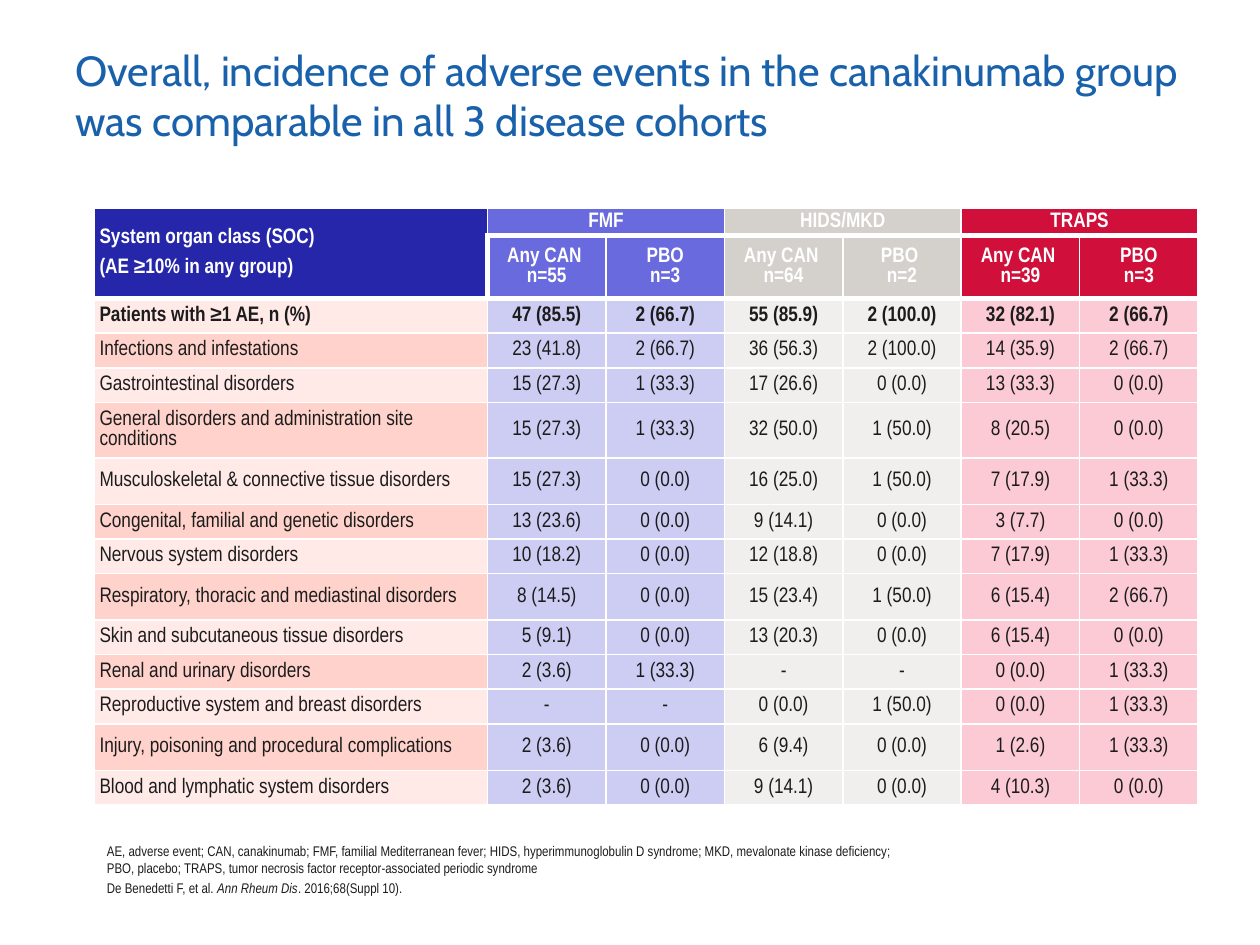
"""Build the slide of adverse events by disease cohort."""
import copy

import lxml.etree
import pptx
import pptx.dml.color
import pptx.enum.text
import pptx.oxml.ns
import pptx.util

Inches, Pt = pptx.util.Inches, pptx.util.Pt
ANCHOR, ALIGN = pptx.enum.text.MSO_ANCHOR, pptx.enum.text.PP_ALIGN
qn = pptx.oxml.ns.qn

COLORS = {
    "title": "1961AB", "text": "1C1C1C", "white": "FFFFFF", "corner": "2526A9",
    "odd": "FFEAE8", "even": "FFD3CC",
    "FMF": "696ADE", "HIDS/MKD": "D4D0CB", "TRAPS": "D0103A",
    "FMF light": "CDCDF4", "HIDS/MKD light": "F1EFEE", "TRAPS light": "FBCAD5",
}
COHORTS = ["FMF", "HIDS/MKD", "TRAPS"]
HEADINGS = ["Any CAN \vn=55", "PBO\vn=3", "Any CAN \vn=64", "PBO \vn=2", "Any CAN \vn=39", "PBO\nn=3"]
EVENTS = [
    ["Patients with ≥1 AE, n (%)", "47 (85.5)", "2 (66.7)", "55 (85.9)", "2 (100.0)", "32 (82.1)", "2 (66.7)"],
    ["Infections and infestations", "23 (41.8)", "2 (66.7)", "36 (56.3)", "2 (100.0)", "14 (35.9)", "2 (66.7)"],
    ["Gastrointestinal disorders", "15 (27.3)", "1 (33.3)", "17 (26.6)", "0 (0.0)", "13 (33.3)", "0 (0.0)"],
    ["General disorders and administration site conditions",
     "15 (27.3)", "1 (33.3)", "32 (50.0)", "1 (50.0)", "8 (20.5)", "0 (0.0)"],
    ["Musculoskeletal & connective tissue disorders",
     "15 (27.3)", "0 (0.0)", "16 (25.0)", "1 (50.0)", "7 (17.9)", "1 (33.3)"],
    ["Congenital, familial and genetic disorders",
     "13 (23.6)", "0 (0.0)", "9 (14.1)", "0 (0.0)", "3 (7.7)", "0 (0.0)"],
    ["Nervous system disorders", "10 (18.2)", "0 (0.0)", "12 (18.8)", "0 (0.0)", "7 (17.9)", "1 (33.3)"],
    ["Respiratory, thoracic and mediastinal disorders",
     "8 (14.5)", "0 (0.0)", "15 (23.4)", "1 (50.0)", "6 (15.4)", "2 (66.7)"],
    ["Skin and subcutaneous tissue disorders", "5 (9.1)", "0 (0.0)", "13 (20.3)", "0 (0.0)", "6 (15.4)", "0 (0.0)"],
    ["Renal and urinary disorders", "2 (3.6)", "1 (33.3)", "-", "-", "0 (0.0)", "1 (33.3)"],
    ["Reproductive system and breast disorders", "-", "-", "0 (0.0)", "1 (50.0)", "0 (0.0)", "1 (33.3)"],
    ["Injury, poisoning and procedural complications",
     "2 (3.6)", "0 (0.0)", "6 (9.4)", "0 (0.0)", "1 (2.6)", "1 (33.3)"],
    ["Blood and lymphatic system disorders", "2 (3.6)", "0 (0.0)", "9 (14.1)", "0 (0.0)", "4 (10.3)", "0 (0.0)"],
]


def style_paragraph(paragraph, color, font_format):
    for run in paragraph.runs:
        for name, value in font_format.items():
            setattr(run.font, name, value)
        run.font.color.rgb = pptx.dml.color.RGBColor.from_string(COLORS[color])
    for line_break in paragraph._p.findall(qn("a:br")):
        line_break.append(copy.deepcopy(paragraph.runs[0]._r.rPr))


def add_border(cell, side, points):
    line = lxml.etree.SubElement(cell._tc.get_or_add_tcPr(), qn(f"a:ln{side}"), w=str(Pt(points)))
    fill = lxml.etree.SubElement(line, qn("a:solidFill"))
    lxml.etree.SubElement(fill, qn("a:srgbClr"), val=COLORS["white"])


deck = pptx.Presentation()
deck.slide_width, deck.slide_height = Inches(10), Inches(7.5)
slide = deck.slides.add_slide(deck.slide_layouts[6])

title = slide.shapes.add_textbox(Inches(0.5), Inches(0.3), Inches(9), Inches(1.25)).text_frame
title.word_wrap = True
title.text = "Overall, incidence of adverse events in the canakinumab group was comparable in all 3 disease cohorts"
style_paragraph(title.paragraphs[0], "title", {"name": "Cabin", "size": Pt(24)})

notes = slide.shapes.add_textbox(Inches(0.75), Inches(6.6), Inches(6.58), Inches(0.56)).text_frame
notes.word_wrap = True
notes.vertical_anchor = ANCHOR.BOTTOM
notes.text = (
    "AE, adverse event; CAN, canakinumab; FMF, familial Mediterranean fever; HIDS, hyperimmunoglobulin D syndrome; "
    "MKD, mevalonate kinase deficiency; PBO, placebo; TRAPS, tumor necrosis factor receptor-associated periodic syndrome"
)
citation = notes.add_paragraph()
citation.space_before = Pt(1.6)
for part in ["De Benedetti F, et al. ", "Ann Rheum Dis", ". 2016;68(Suppl 10)."]:
    citation.add_run().text = part
for paragraph in notes.paragraphs:
    style_paragraph(paragraph, "text", {"name": "Arial Narrow", "size": Pt(8)})
citation.runs[1].font.italic = True

cohort_row = ["System organ class (SOC)\n(AE ≥10% in any group)"]
for cohort in COHORTS:
    cohort_row += [cohort, ""]
rows = [cohort_row, [""] + HEADINGS] + EVENTS

events = slide.shapes.add_table(len(rows), 7, Inches(0.75), Inches(1.65), Inches(8.76), Inches(4.68)).table
for index, column in enumerate(events.columns):
    column.width = Inches(0.94 if index else 3.12)
special_heights = {0: 0.22, 1: 0.44, 5: 0.44, 6: 0.37, 9: 0.37, 13: 0.37}
plain_height = (4.68 - sum(special_heights.values())) / (len(rows) - len(special_heights))
for index, row in enumerate(events.rows):
    row.height = Inches(special_heights.get(index, plain_height))

cell_format = {
    "vertical_anchor": ANCHOR.MIDDLE, "margin_left": Inches(0.04), "margin_right": Inches(0.04),
    "margin_top": 0, "margin_bottom": 0,
}
for r, values in enumerate(rows):
    for c, value in enumerate(values):
        cell = events.cell(r, c)
        cell.text = value
        for name, setting in cell_format.items():
            setattr(cell, name, setting)
        widths = {"L": 3 if (r, c) == (1, 1) else 1, "R": 1, "T": 3 if r in (1, 2) else 1, "B": 3 if r < 2 else 1}
        for side, points in widths.items():
            add_border(cell, side, points)
        if c:
            fill = COHORTS[(c - 1) // 2] + (" light" if r > 1 else "")
        else:
            fill = "corner" if r < 2 else ("even" if r % 2 else "odd")
        cell.fill.solid()
        cell.fill.fore_color.rgb = pptx.dml.color.RGBColor.from_string(COLORS[fill])
        font_format = {"name": "Arial Narrow", "size": Pt(12), "bold": r < 3}
        for paragraph in cell.text_frame.paragraphs:
            paragraph.alignment = ALIGN.CENTER if c else ALIGN.LEFT
            style_paragraph(paragraph, "white" if r < 2 else "text", font_format)

events.cell(0, 0).text_frame.paragraphs[1].line_spacing = 1.5
events.cell(0, 0).merge(events.cell(1, 0))
for c in (1, 3, 5):
    events.cell(0, c).merge(events.cell(0, c + 1))

deck.save("out.pptx")
